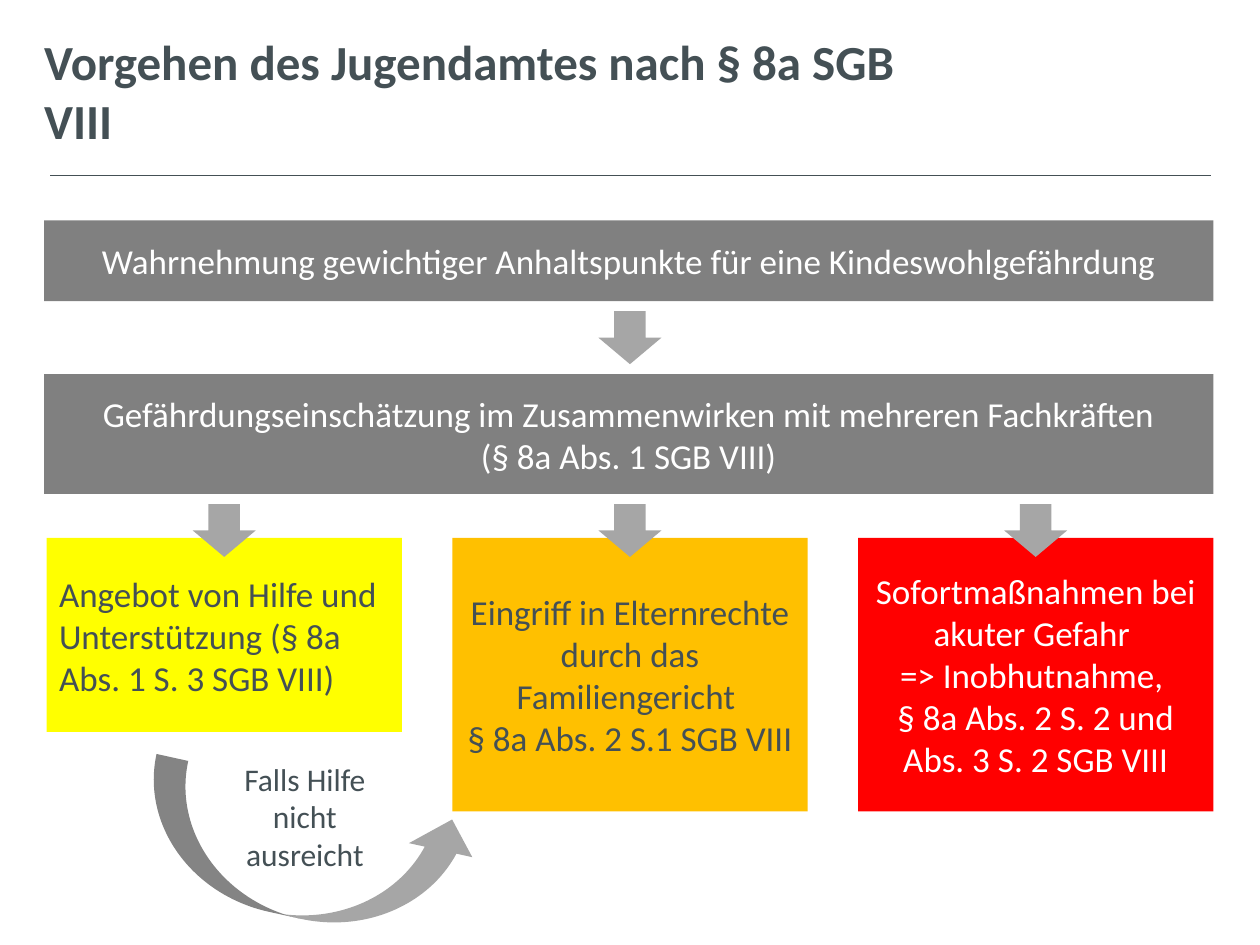
"""Build the slide on the steps a youth welfare office takes under § 8a SGB VIII."""
import pptx
import pptx.dml.color
import pptx.enum.shapes
import pptx.enum.text
import pptx.util
from lxml import etree

RGB = pptx.dml.color.RGBColor
SLATE = RGB(0x44, 0x50, 0x55)
WHITE = RGB(0xFF, 0xFF, 0xFF)
GRAY = RGB(0x80, 0x80, 0x80)
SILVER = RGB(0xA6, 0xA6, 0xA6)
YELLOW = RGB(0xFF, 0xFF, 0x00)
AMBER = RGB(0xFF, 0xC0, 0x00)
RED = RGB(0xFF, 0x00, 0x00)

Inch = pptx.util.Inches
Kind = pptx.enum.shapes.MSO_SHAPE
Align = pptx.enum.text.PP_ALIGN
Anchor = pptx.enum.text.MSO_ANCHOR

TITLE = "Vorgehen des Jugendamtes nach § 8a SGB VIII"
NOTE = "Falls Hilfe nicht ausreicht"
BARS = [
    (1.75, 0.64, ["Wahrnehmung gewichtiger Anhaltspunkte für eine Kindeswohlgefährdung"]),
    (2.97, 0.95, ["Gefährdungseinschätzung im Zusammenwirken mit mehreren Fachkräften",
                  "(§ 8a Abs. 1 SGB VIII)"]),
]
STEPS = [
    (YELLOW, SLATE, Align.LEFT, 1.54,
     ["Angebot von Hilfe und Unterstützung (§ 8a Abs. 1 S. 3 SGB VIII)"]),
    (AMBER, SLATE, Align.CENTER, 2.17,
     ["Eingriff in Elternrechte durch das Familiengericht ", "§ 8a Abs. 2 S.1 SGB VIII"]),
    (RED, WHITE, Align.CENTER, 2.17,
     ["Sofortmaßnahmen bei akuter Gefahr ", "=> Inobhutnahme, ",
      "§ 8a Abs. 2 S. 2 und Abs. 3 S. 2 SGB VIII"]),
]
LEFT, WIDE = 0.35, 9.28
COL, STRIDE, FIRST, TOP = 2.82, 3.22, 0.37, 4.27
HEAD_W, HEAD_H, GAP = 0.5, 0.42, 0.08


def write(shape, lines, size, color, align, anchor, bold=False):
    frame = shape.text_frame
    frame.word_wrap = True
    frame.vertical_anchor = anchor
    for i, line in enumerate(lines):
        para = frame.paragraphs[0] if i == 0 else frame.add_paragraph()
        para.text = line
        para.alignment = align
        font = para.font
        font.name, font.size, font.bold = "Calibri", pptx.util.Pt(size), bold
        font.color.rgb = color


def draw(slide, kind, box, fill):
    shape = slide.shapes.add_shape(kind, *map(Inch, box))
    shape.shadow.inherit = False
    shape.fill.solid()
    shape.fill.fore_color.rgb = fill
    shape.line.fill.background()
    return shape


def rule(slide, left, right, y):
    line = slide.shapes.add_connector(
        pptx.enum.shapes.MSO_CONNECTOR.STRAIGHT, *map(Inch, (left, y, right, y)))
    line.line.color.rgb = SLATE
    line.line.width = pptx.util.Pt(0.5)
    etree.SubElement(line._element.spPr, pptx.oxml.ns.qn("a:effectLst"))


def main():
    deck = pptx.Presentation()
    deck.slide_width, deck.slide_height = Inch(10), Inch(7.5)
    slide = deck.slides.add_slide(deck.slide_layouts[6])

    rule(slide, 0.4, 9.61, 1.39)
    title = slide.shapes.add_textbox(*map(Inch, (LEFT, 0.36, 6.99, 0.72)))
    title.text_frame.margin_left = title.text_frame.margin_right = 0
    write(title, [TITLE], 28, SLATE, Align.LEFT, Anchor.MIDDLE, True)

    for top, high, lines in BARS:
        bar = draw(slide, Kind.RECTANGLE, (LEFT, top, WIDE, high), GRAY)
        write(bar, lines, 20, WHITE, Align.CENTER, Anchor.MIDDLE)

    for i, (fill, color, align, high, lines) in enumerate(STEPS):
        box = draw(slide, Kind.RECTANGLE, (FIRST + i * STRIDE, TOP, COL, high), fill)
        write(box, lines, 20, color, align, Anchor.MIDDLE)

    curve = draw(slide, Kind.CURVED_UP_ARROW, (1.1, 6.26, 2.66, 1.03), SILVER)
    curve.rotation = 12.5
    note = slide.shapes.add_textbox(*map(Inch, (1.79, 5.98, 1.26, 1.01)))
    write(note, [NOTE], 18, SLATE, Align.CENTER, Anchor.TOP)

    mids = [FIRST + i * STRIDE + COL / 2 for i in range(len(STEPS))]
    ends = [top + high + GAP for top, high, _ in BARS]
    for mid, top in [(mids[1], ends[0])] + [(mid, ends[1]) for mid in mids]:
        draw(slide, Kind.DOWN_ARROW, (mid - HEAD_W / 2, top, HEAD_W, HEAD_H), SILVER)

    deck.save("out.pptx")


if __name__ == "__main__":
    main()
